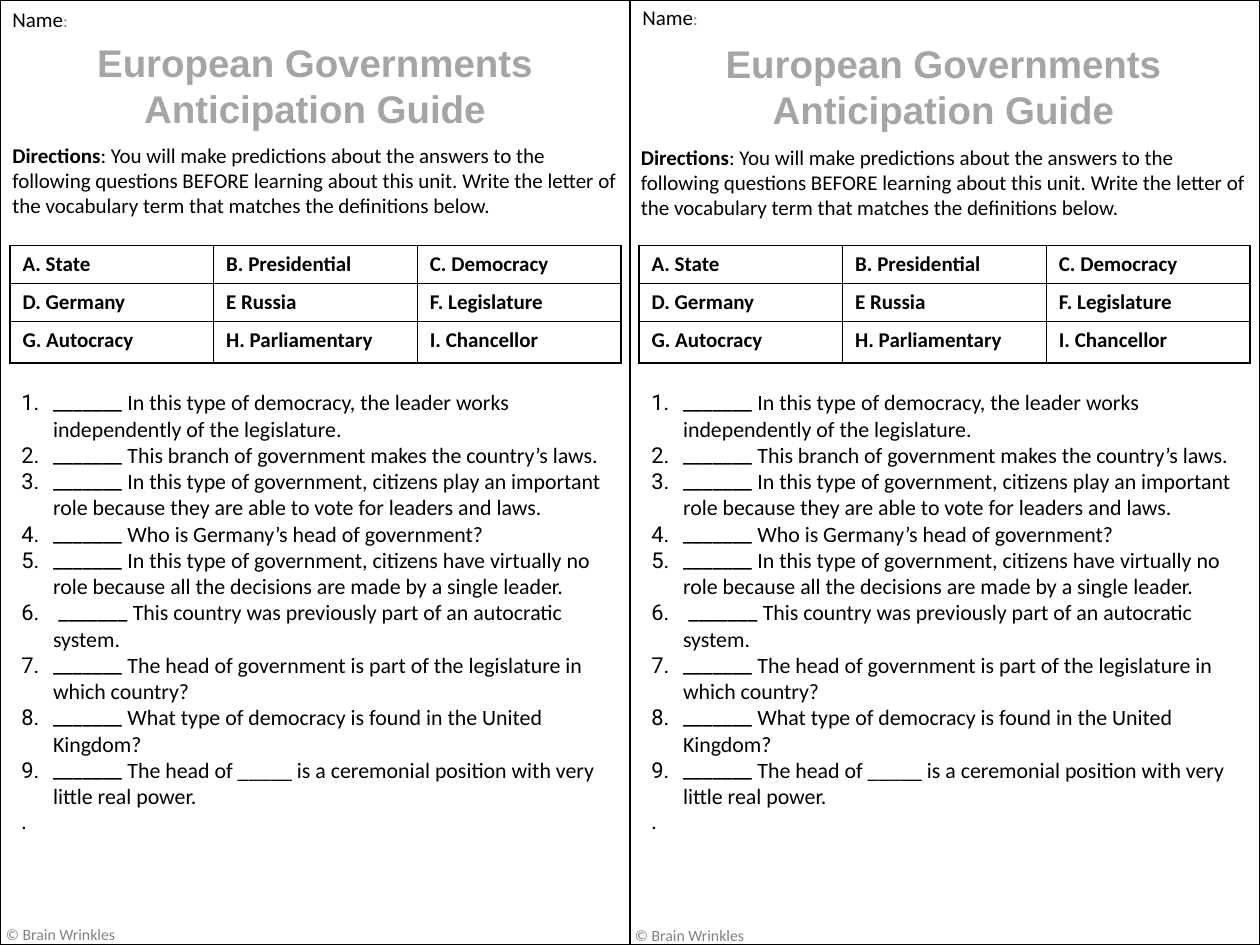
from dataclasses import dataclass

from lxml import etree
from pptx import Presentation
from pptx.dml.color import RGBColor
from pptx.enum.shapes import MSO_SHAPE
from pptx.enum.text import MSO_ANCHOR, MSO_AUTO_SIZE, PP_ALIGN
from pptx.oxml.ns import qn
from pptx.util import Cm, Pt

BLACK = RGBColor(0x00, 0x00, 0x00)
GREY = RGBColor(0x80, 0x80, 0x80)
SILVER = RGBColor(0xA5, 0xA5, 0xA5)
CENTER = PP_ALIGN.CENTER
TOP = MSO_ANCHOR.TOP
GROW = MSO_AUTO_SIZE.SHAPE_TO_FIT_TEXT
RECT = MSO_SHAPE.RECTANGLE
BODY = "Calibri"
WIDE, HIGH = 25.4, 19.05
HALF = WIDE / 2
TITLE = ("European Governments", "Anticipation Guide")
GUIDE = (
    ": You will make predictions about the answers to the following questions "
    "BEFORE learning about this unit. Write the letter of the vocabulary term "
    "that matches the definitions below."
)
TERMS = (
    ("A. State", "B. Presidential", "C. Democracy"),
    ("D. Germany", "E Russia", "F. Legislature"),
    ("G. Autocracy", "H. Parliamentary", "I. Chancellor"),
)
ROWS = (0.76, 0.76, 0.84)
BLANK = "_______ "
ITEMS = (
    (BLANK, "In this type of democracy, the leader works independently of the legislature."),
    (BLANK, "This branch of government makes the country’s laws."),
    (BLANK, "In this type of government, citizens play an important role because "
            "they are able to vote for leaders and laws."),
    (BLANK, "Who is Germany’s head of government?"),
    (BLANK, "In this type of government, citizens have virtually no role because "
            "all the decisions are made by a single leader."),
    (" " + BLANK, "This country was previously part of an autocratic system."),
    (BLANK, "The head of government is part of the legislature in which country?"),
    (BLANK, "What type of democracy is found in the United Kingdom?"),
    (BLANK, "The head of _____ is a ceremonial position with very little real power."),
)


@dataclass
class Box:
    left: float
    top: float
    width: float
    height: float


@dataclass
class Page:
    title: Box
    guide: Box
    foot: Box
    name: Box
    quiz: Box
    grid: Box


PAGES = (
    Page(Box(0, 0.69, HALF, 2.08), Box(0, 2.74, HALF, 1.8), Box(-0.13, 18.52, 7.37, 0.64),
         Box(0, 0, 7.37, 0.76), Box(0.18, 7.72, HALF, 10.39), Box(0.2, 4.95, 12.32, 2.36)),
    Page(Box(12.67, 0.71, HALF, 2.08), Box(12.67, 2.79, HALF, 1.8), Box(12.55, 18.54, 7.37, 0.64),
         Box(HALF, -0.03, 7.37, 0.76), Box(12.88, 7.72, HALF, 10.39), Box(12.88, 4.95, 12.32, 2.36)),
)


def place(box: Box) -> tuple:
    return Cm(box.left), Cm(box.top), Cm(box.width), Cm(box.height)


def style(font, size: float, color: RGBColor = BLACK, bold: bool = False, face: str = BODY) -> None:
    font.name, font.size, font.bold = face, Pt(size), bold
    font.color.rgb = color


def add_run(par, text: str, size: float, color: RGBColor = BLACK,
            bold: bool = False, face: str = BODY) -> None:
    run = par.add_run()
    run.text = text
    style(run.font, size, color, bold, face)


def add_line(parent, tag: str, width: float, spot: int) -> None:
    line = etree.Element(qn(tag), w=str(Pt(width)))
    fill = etree.SubElement(line, qn("a:solidFill"))
    etree.SubElement(fill, qn("a:srgbClr"), val=str(BLACK))
    parent.insert(spot, line)


def add_text(slide, box: Box):
    frame = slide.shapes.add_textbox(*place(box)).text_frame
    frame.word_wrap = True
    frame.auto_size = GROW
    return frame


def draw_title(shape, box: Box) -> None:
    shape.left, shape.top, shape.width, shape.height = place(box)
    frame = shape.text_frame
    frame.word_wrap, frame.auto_size = True, GROW
    frame.vertical_anchor = TOP
    frame.margin_left = frame.margin_right = Cm(0.18)
    frame.margin_top = frame.margin_bottom = Cm(0.1)
    frame.text = "\n".join(TITLE)
    for par in frame.paragraphs:
        par.alignment = CENTER
        style(par.font, 22, SILVER, True, "Arial")
        add_line(par.runs[0].font._element, "a:ln", 0.8, 0)


def draw_guide(slide, box: Box) -> None:
    par = add_text(slide, box).paragraphs[0]
    add_run(par, "Directions", 12, bold=True)
    add_run(par, GUIDE, 12)


def draw_foot(slide, box: Box) -> None:
    par = add_text(slide, box).paragraphs[0]
    par.text = "© Brain Wrinkles"
    style(par.font, 9, GREY)


def draw_name(slide, box: Box) -> None:
    par = add_text(slide, box).paragraphs[0]
    add_run(par, "Name", 12)
    add_run(par, ":", 10, GREY)


def draw_quiz(slide, box: Box) -> None:
    frame = add_text(slide, box)
    par = frame.paragraphs[0]
    for blank, text in ITEMS:
        props = par._p.get_or_add_pPr()
        props.set("marL", str(Cm(0.64)))
        props.set("indent", str(-Cm(0.64)))
        etree.SubElement(props, qn("a:buAutoNum"), type="arabicPeriod")
        add_run(par, blank, 12.5, face="Roboto")
        add_run(par, text, 12.5)
        par = frame.add_paragraph()
    par.text = "."
    style(par.font, 12)


def draw_grid(slide, box: Box) -> None:
    table = slide.shapes.add_table(len(TERMS), len(TERMS[0]), *place(box)).table
    table.first_row = table.horz_banding = False
    for col in table.columns:
        col.width = Cm(box.width / len(TERMS[0]))
    for row, high, terms in zip(table.rows, ROWS, TERMS):
        row.height = Cm(high)
        for cell, term in zip(row.cells, terms):
            props = cell._tc.get_or_add_tcPr()
            for spot, tag in enumerate(("a:lnL", "a:lnR", "a:lnT", "a:lnB")):
                add_line(props, tag, 1, spot)
            cell.fill.background()
            cell.text = term
            style(cell.text_frame.paragraphs[0].font, 12, bold=True)


def draw_frame(slide, box: Box) -> None:
    shape = slide.shapes.add_shape(RECT, *place(box))
    shape.shadow.inherit = False
    shape.fill.background()
    shape.line.color.rgb = BLACK
    shape.line.width = Pt(1)


def main() -> None:
    deck = Presentation()
    deck.slide_width, deck.slide_height = Cm(WIDE), Cm(HIGH)
    slide = deck.slides.add_slide(deck.slide_layouts[5])
    for width in (HALF, WIDE):
        draw_frame(slide, Box(0, 0, width, HIGH))
    heads = (slide.shapes.title, slide.shapes.add_textbox(*place(PAGES[1].title)))
    for head, page in zip(heads, PAGES):
        draw_title(head, page.title)
        draw_guide(slide, page.guide)
        draw_foot(slide, page.foot)
        draw_name(slide, page.name)
        draw_quiz(slide, page.quiz)
        draw_grid(slide, page.grid)
    deck.save("out.pptx")


if __name__ == "__main__":
    main()
